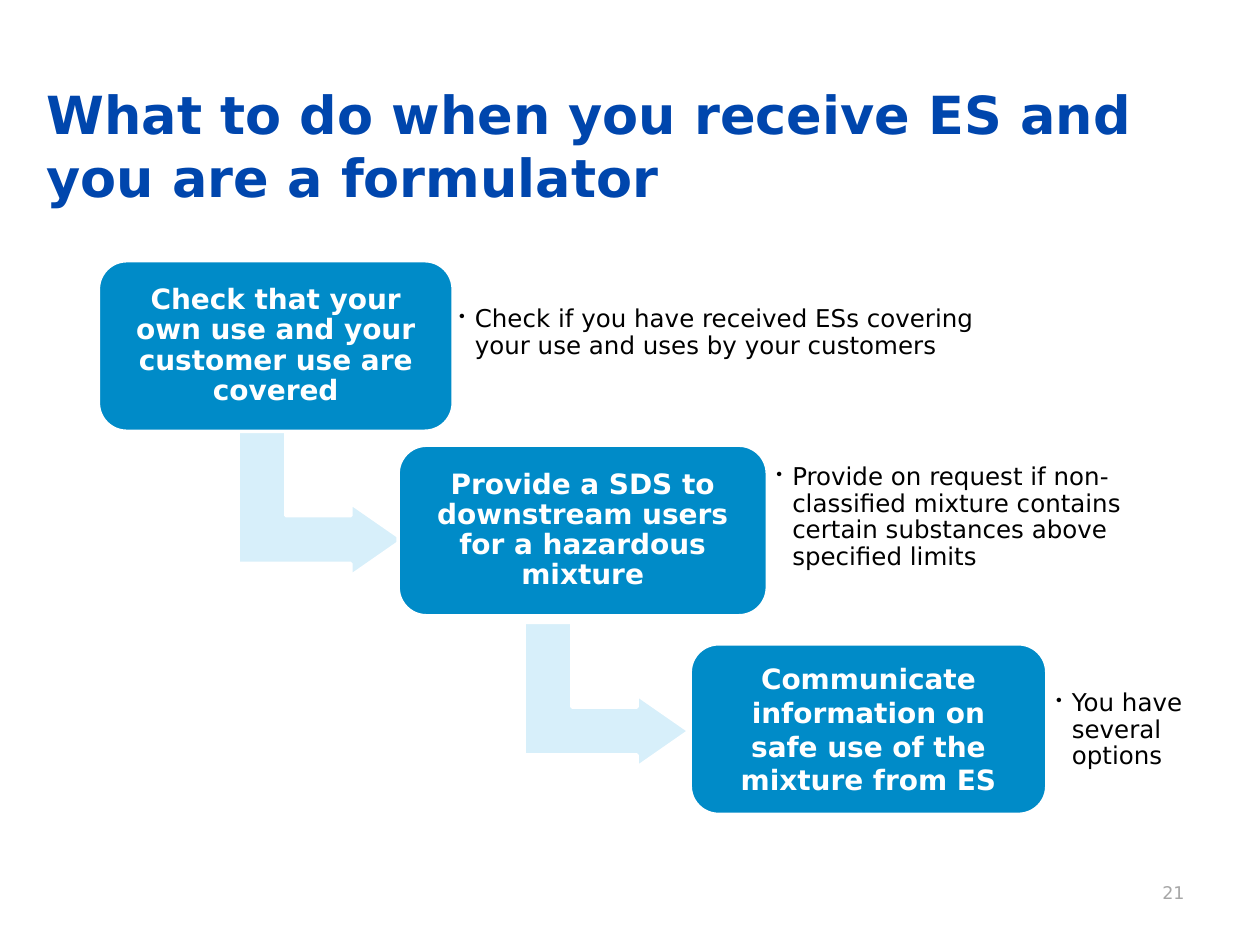
from lxml.etree import SubElement
from pptx import Presentation
from pptx.dml.color import RGBColor
from pptx.enum.shapes import MSO_SHAPE
from pptx.enum.text import MSO_ANCHOR, MSO_AUTO_SIZE, PP_ALIGN
from pptx.oxml.ns import qn
from pptx.util import Pt

FONT = "DejaVu Sans"
COLORS = {
    "title": "0046AD",
    "step": "008BC8",
    "arrow": "D7EFFA",
    "white": "FFFFFF",
    "text": "000000",
    "number": "A6A6A6",
}
STEP_HEIGHT = 97.5
NOTE_HEIGHT = 78.5
STEPS = [
    ("Check that your own use and your customer use are covered", 56.2, 149, 202.8, 0.9),
    ("Provide a SDS to downstream users for a hazardous mixture", 227.5, 254.4, 211, 0.9),
    ("Communicate information on safe use of the mixture from ES", 394.4, 367.9, 203.8, 1.0),
]
ARROWS = [(141.8, 240.5), (305.3, 349.9)]
NOTES = [
    ("Check if you have received ESs covering your use and uses by your customers",
     257.8, 151.2, 336.2, 4.5),
    ("Provide on request if non-classified mixture contains certain substances above specified limits",
     439.2, 265, 229, 21.5),
    ("You have several options", 599, 378, 87.8, 4.5),
]


def rgb(name):
    return RGBColor.from_string(COLORS[name])


def set_frame(tf, anchor, margin_x, margin_y):
    tf.word_wrap = True
    tf.auto_size = MSO_AUTO_SIZE.NONE
    tf.vertical_anchor = anchor
    tf.margin_left = tf.margin_right = Pt(margin_x)
    tf.margin_top = tf.margin_bottom = Pt(margin_y)


def add_text(tf, text, size, color, align, bold=False, spacing=1.0):
    p = tf.paragraphs[0]
    p.alignment = align
    p.line_spacing = spacing
    r = p.add_run()
    r.text = text
    r.font.name = FONT
    r.font.size = Pt(size)
    r.font.bold = bold
    r.font.color.rgb = rgb(color)
    return p


def add_filled(s, kind, left, top, width, height, color):
    sp = s.shapes.add_shape(kind, Pt(left), Pt(top), Pt(width), Pt(height))
    sp.shadow.inherit = False
    sp.fill.solid()
    sp.fill.fore_color.rgb = rgb(color)
    sp.line.color.rgb = rgb("white")
    sp.line.width = Pt(2)
    return sp


def add_title(s, text):
    sp = s.shapes.title
    sp.left, sp.top, sp.width, sp.height = Pt(19.4), Pt(43.2), Pt(635), Pt(42.5)
    set_frame(sp.text_frame, MSO_ANCHOR.TOP, 7.2, 3.6)
    add_text(sp.text_frame, text, 30, "title", PP_ALIGN.LEFT, bold=True)


def add_step(s, text, left, top, width, spacing):
    sp = add_filled(s, MSO_SHAPE.ROUNDED_RECTANGLE, left, top, width, STEP_HEIGHT, "step")
    set_frame(sp.text_frame, MSO_ANCHOR.MIDDLE, 9.4, 9.4)
    add_text(sp.text_frame, text, 16, "white", PP_ALIGN.CENTER, True, spacing)


def add_arrow(s, left, top):
    sp = add_filled(s, MSO_SHAPE.BENT_UP_ARROW, left, top, 82.8, 94.3, "arrow")
    sp.rotation = 90
    for i, value in enumerate((0.33, 0.25, 0.36)):
        sp.adjustments[i] = value


def add_bullet(p):
    pPr = p._p.get_or_add_pPr()
    pPr.set("marL", str(Pt(9)))
    pPr.set("indent", str(-Pt(9)))
    SubElement(pPr, qn("a:buSzPct"), val="70000")
    SubElement(pPr, qn("a:buChar"), char="•")


def add_note(s, text, left, top, width, margin_bottom):
    sp = s.shapes.add_textbox(Pt(left), Pt(top), Pt(width), Pt(NOTE_HEIGHT))
    tf = sp.text_frame
    set_frame(tf, MSO_ANCHOR.MIDDLE, 4.5, 4.5)
    tf.margin_bottom = Pt(margin_bottom)
    add_bullet(add_text(tf, text, 14, "text", PP_ALIGN.LEFT, spacing=0.9))


def add_number(s, text):
    sp = s.shapes.add_textbox(Pt(516), Pt(500.4), Pt(168), Pt(28.8))
    set_frame(sp.text_frame, MSO_ANCHOR.TOP, 7.2, 3.6)
    add_text(sp.text_frame, text, 10, "number", PP_ALIGN.RIGHT)


def main():
    prs = Presentation()
    prs.slide_width, prs.slide_height = Pt(720), Pt(540)
    s = prs.slides.add_slide(prs.slide_layouts[5])
    add_title(s, "What to do when you receive ES and you are a formulator")
    for arrow in ARROWS:
        add_arrow(s, *arrow)
    for step in STEPS:
        add_step(s, *step)
    for note in NOTES:
        add_note(s, *note)
    add_number(s, "21")
    prs.save("out.pptx")


if __name__ == "__main__":
    main()
